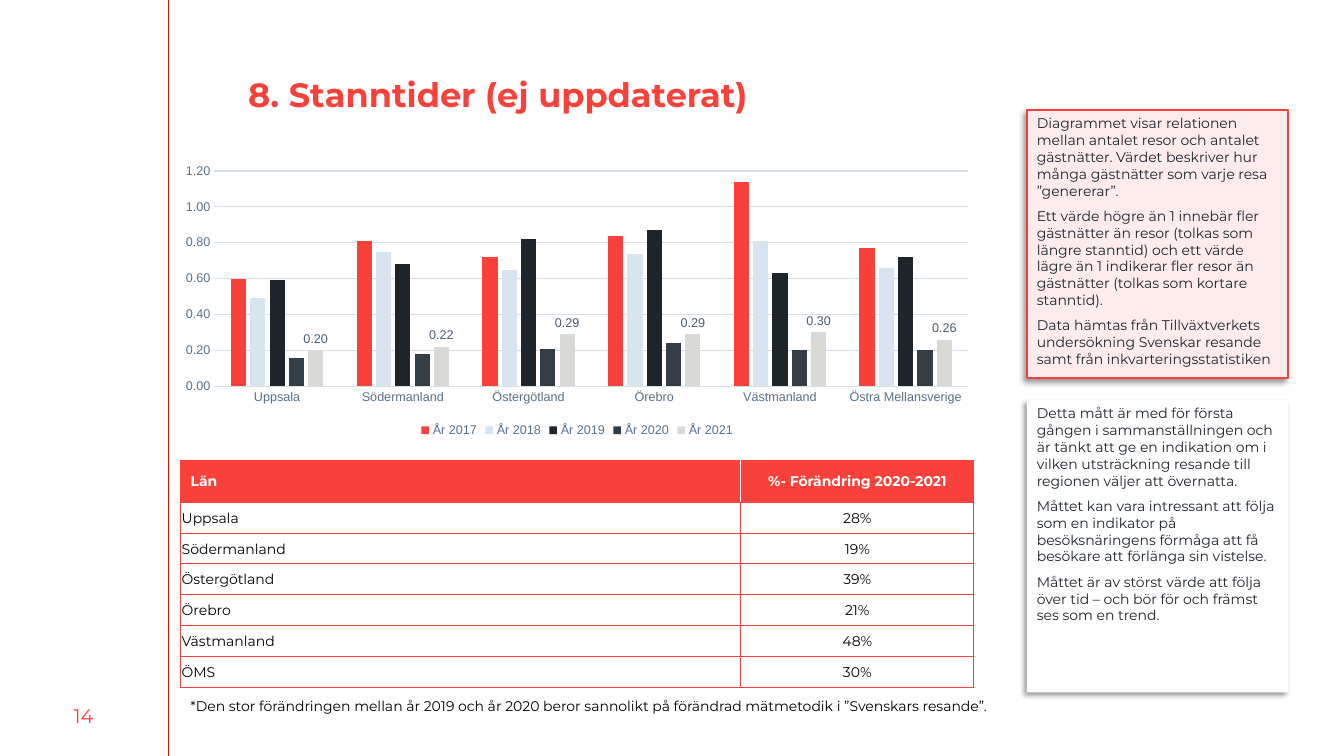
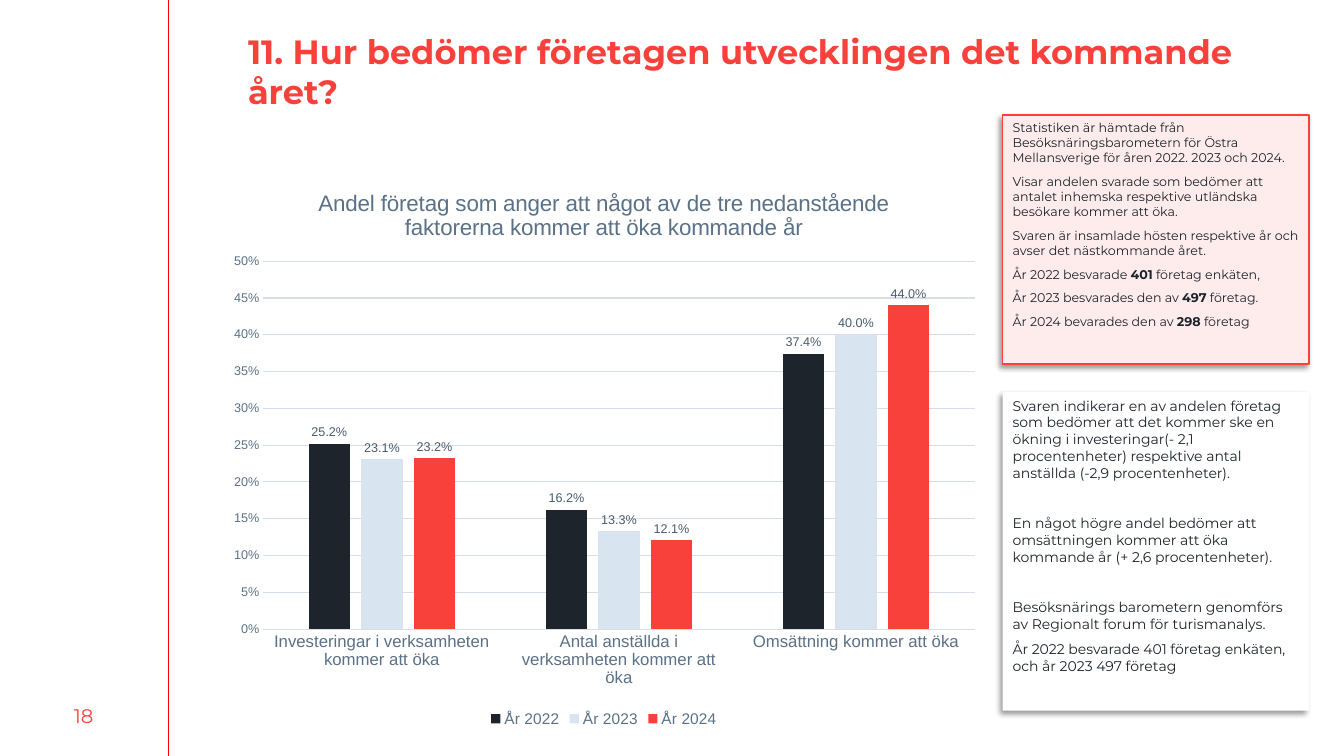
"""Build two slides on tourism statistics, each with a chart and two side notes."""
from lxml import etree
from pptx import Presentation
from pptx.chart.data import CategoryChartData
from pptx.dml.color import RGBColor
from pptx.enum.chart import XL_CHART_TYPE, XL_LABEL_POSITION, XL_LEGEND_POSITION, XL_TICK_MARK
from pptx.enum.shapes import MSO_CONNECTOR, MSO_SHAPE
from pptx.enum.text import MSO_ANCHOR, MSO_AUTO_SIZE, PP_ALIGN
from pptx.oxml import parse_xml
from pptx.oxml.ns import nsdecls, qn
from pptx.util import Cm, Pt

COLUMNS = XL_CHART_TYPE.COLUMN_CLUSTERED
OUTSIDE = XL_LABEL_POSITION.OUTSIDE_END
BOTTOM = XL_LEGEND_POSITION.BOTTOM
NO_TICK = XL_TICK_MARK.NONE
STRAIGHT, RECTANGLE = MSO_CONNECTOR.STRAIGHT, MSO_SHAPE.RECTANGLE
TOP, MIDDLE = MSO_ANCHOR.TOP, MSO_ANCHOR.MIDDLE
LEFT, CENTER = PP_ALIGN.LEFT, PP_ALIGN.CENTER

WIDTH, HEIGHT, RULE_X = 33.87, 19.05, 4.24
FONT, CHART_FONT = "Montserrat", "Arial"
COLORS = {
    "red": "F8413A", "rule": "FF0000", "pink": "FEECEC", "white": "FFFFFF",
    "black": "000000", "ink": "1D242B", "slate": "333D46", "ice": "D8E5F0",
    "gray": "D9D9D6", "axis": "5B7187", "grid": "D8DEE5", "label": "495B6C",
}

SLIDES = [
    {
        "number": "14",
        "title": "8. Stanntider (ej uppdaterat)",
        "title_top": 1.73,
        "notes": {"left": 25.88, "width": 6.58, "items": [
            {"top": 2.77, "height": 6.76, "size": 10, "text": [
                "Diagrammet visar relationen mellan antalet resor och antalet gästnätter. "
                "Värdet beskriver hur många gästnätter som varje resa ”genererar”.",
                "Ett värde högre än 1 innebär fler gästnätter än resor (tolkas som längre "
                "stanntid) och ett värde lägre än 1 indikerar fler resor än gästnätter "
                "(tolkas som kortare stanntid).",
                "Data hämtas från Tillväxtverkets undersökning Svenskar resande samt från "
                "inkvarteringsstatistiken"]},
            {"top": 10.08, "height": 7.37, "size": 10, "text": [
                "Detta mått är med för första gången i sammanställningen och är tänkt att ge "
                "en indikation om i vilken utsträckning resande till regionen väljer att "
                "övernatta.",
                "Måttet kan vara intressant att följa som en indikator på besöksnäringens "
                "förmåga att få besökare att förlänga sin vistelse.",
                "Måttet är av störst värde att följa över tid – och bör för och främst ses "
                "som en trend."]}]},
        "chart": {
            "at": (4.27, 3.99, 20.55, 7.14), "plot": (0.055, 0.045, 0.925, 0.76),
            "title": None, "sizes": {"category": 9, "legend": 9},
            "scale": (1.2, 0.2), "axis_format": "0.00", "label_format": "0.00",
            "categories": ["Uppsala", "Södermanland", "Östergötland", "Örebro",
                           "Västmanland", "Östra Mellansverige"],
            "series": [
                ("År 2017", "red", False, [0.6, 0.81, 0.72, 0.84, 1.14, 0.77]),
                ("År 2018", "ice", False, [0.49, 0.75, 0.65, 0.74, 0.81, 0.66]),
                ("År 2019", "ink", False, [0.59, 0.68, 0.82, 0.87, 0.63, 0.72]),
                ("År 2020", "slate", False, [0.16, 0.18, 0.21, 0.24, 0.2, 0.2]),
                ("År 2021", "gray", True, [0.2, 0.22, 0.29, 0.29, 0.3, 0.26])]},
        "table": [("Län", "%- Förändring 2020-2021"), ("Uppsala", "28%"),
                  ("Södermanland", "19%"), ("Östergötland", "39%"), ("Örebro", "21%"),
                  ("Västmanland", "48%"), ("ÖMS", "30%")],
        "footnote": "*Den stor förändringen mellan år 2019 och år 2020 beror sannolikt på "
                    "förändrad mätmetodik i ”Svenskars resande”.",
    },
    {
        "number": "18",
        "title": "11. Hur bedömer företagen utvecklingen det kommande året?",
        "title_top": 0.64,
        "notes": {"left": 25.27, "width": 7.72, "items": [
            {"top": 2.9, "height": 6.27, "size": 9, "text": [
                "Statistiken är hämtade från Besöksnäringsbarometern för Östra Mellansverige "
                "för åren 2022. 2023 och 2024.",
                "Visar andelen svarade som bedömer att antalet inhemska respektive utländska "
                "besökare kommer att öka.",
                "Svaren är insamlade hösten respektive år och avser det nästkommande året.",
                "År 2022 besvarade |401| företag enkäten,",
                "År 2023 besvarades den av |497| företag.",
                "År 2024 bevarades den av |298| företag"]},
            {"top": 9.88, "height": 8.03, "size": 10, "gaps": {1: 21, 2: 21}, "text": [
                "Svaren indikerar en av andelen företag som bedömer att det kommer ske en "
                "ökning i investeringar(- 2,1 procentenheter) respektive antal anställda "
                "(-2,9 procentenheter).",
                "En något högre andel bedömer att omsättningen kommer att öka kommande år "
                "(+ 2,6 procentenheter).",
                "Besöksnärings barometern genomförs av Regionalt forum för turismanalys.",
                "År 2022 besvarade 401 företag enkäten, och år 2023 497 företag"]}]},
        "chart": {
            "at": (5.49, 4.24, 19.46, 14.2), "plot": (0.059, 0.165, 0.921, 0.653),
            "title": "Andel företag som anger att något av de tre nedanstående faktorerna "
                     "kommer att öka kommande år",
            "sizes": {"category": 12, "legend": 11},
            "scale": (0.5, 0.05), "axis_format": "0%", "label_format": "0.0%",
            "categories": ["Investeringar i verksamheten kommer att öka",
                           "Antal anställda i verksamheten kommer att öka",
                           "Omsättning kommer att öka"],
            "series": [
                ("År 2022", "ink", True, [0.252, 0.162, 0.374]),
                ("År 2023", "ice", True, [0.231, 0.133, 0.4]),
                ("År 2024", "red", True, [0.232, 0.121, 0.44])]},
    },
]


def rgb(name):
    """Return the named colour."""
    return RGBColor.from_string(COLORS[name])


def style(font, size, color, bold=False, name=FONT):
    """Format a font."""
    font.name, font.size, font.bold = name, Pt(size), bold
    font.color.rgb = rgb(color)


def write(frame, *texts, size=10, color="ink", bold=False, align=LEFT, anchor=TOP,
          before=0, after=0, spacing=1.0, gaps=None):
    """Fill a text frame; pieces between bars are bold."""
    frame.word_wrap = True
    frame.vertical_anchor = anchor
    for index, text in enumerate(texts):
        para = frame.add_paragraph() if index else frame.paragraphs[0]
        para.alignment, para.line_spacing = align, spacing
        para.space_before = Pt((gaps or {}).get(index, before) if index else 0)
        para.space_after = Pt(after)
        for position, piece in enumerate(text.split("|")):
            span = para.add_run()
            span.text = piece
            style(span.font, size, color, bold or position % 2 == 1)


def add_rule(page, layout):
    """Draw the vertical rule and move it to the shared layout."""
    rule = page.shapes.add_connector(STRAIGHT, Cm(RULE_X), 0, Cm(RULE_X), Cm(HEIGHT))
    rule.line.color.rgb = rgb("rule")
    rule.line.width = Pt(0.75)
    etree.SubElement(rule.element.spPr, qn("a:effectLst"))
    layout.shapes.element.append(rule.element)


def add_text(page, text, left, top, width, height, **options):
    """Add a text box."""
    box = page.shapes.add_textbox(Cm(left), Cm(top), Cm(width), Cm(height))
    write(box.text_frame, text, **options)


def add_title(page, text, top):
    """Place and format the title placeholder."""
    title = page.shapes.title
    title.left, title.top, title.width, title.height = Cm(6.12), Cm(top), Cm(25.7), Cm(2.26)
    frame = title.text_frame
    frame.auto_size = MSO_AUTO_SIZE.NONE
    frame.margin_left = frame.margin_right = frame.margin_top = frame.margin_bottom = Cm(0.13)
    write(frame, text, size=24, color="red", bold=True)


def add_note(page, note, left, width, framed):
    """Add a shadowed side note, pink with a red frame or plain white."""
    box = page.shapes.add_shape(RECTANGLE, Cm(left), Cm(note["top"]), Cm(width),
                                Cm(note["height"]))
    box.fill.solid()
    box.fill.fore_color.rgb = rgb("pink" if framed else "white")
    if framed:
        box.line.color.rgb = rgb("red")
        box.line.width = Pt(1)
    else:
        box.line.fill.background()
    box.shadow.inherit = False
    effects = box.element.spPr.find(qn("a:effectLst"))
    effects.append(parse_xml(
        f'<a:outerShdw {nsdecls("a")} blurRad="{Pt(4)}" dist="{Pt(3)}" dir="8100000" '
        f'algn="tr" rotWithShape="0"><a:srgbClr val="{COLORS["black"]}">'
        '<a:alpha val="40000"/></a:srgbClr></a:outerShdw>'))
    write(box.text_frame, *note["text"], size=note["size"], before=3, after=3,
          gaps=note.get("gaps"))


def place_plot(chart, fractions):
    """Fix the inner plot area as fractions of the chart."""
    area = chart.element.find(".//" + qn("c:plotArea"))
    for old in area.findall(qn("c:layout")):
        area.remove(old)
    modes = '<c:layoutTarget val="inner"/><c:xMode val="edge"/><c:yMode val="edge"/>'
    values = "".join(f'<c:{key} val="{value}"/>' for key, value in zip("xywh", fractions))
    area.insert(0, parse_xml(f'<c:layout {nsdecls("c")}><c:manualLayout>{modes}{values}'
                             '</c:manualLayout></c:layout>'))


def add_columns(page, plan):
    """Add a clustered column chart."""
    data = CategoryChartData(number_format=plan["label_format"])
    data.categories = plan["categories"]
    for name, _, _, values in plan["series"]:
        data.add_series(name, values)
    chart = page.shapes.add_chart(COLUMNS, *map(Cm, plan["at"]), data).chart
    style(chart.font, 10, "ink", name=CHART_FONT)
    chart.has_title = bool(plan["title"])
    if plan["title"]:
        frame = chart.chart_title.text_frame
        frame.text = plan["title"]
        style(frame.paragraphs[0].runs[0].font, 16, "axis", name=CHART_FONT)
        chart.chart_title.include_in_layout = False
    chart.has_legend = True
    chart.legend.position = BOTTOM
    chart.legend.include_in_layout = False
    style(chart.legend.font, plan["sizes"]["legend"], "axis", name=CHART_FONT)

    values, categories = chart.value_axis, chart.category_axis
    for axis, size in ((values, 9), (categories, plan["sizes"]["category"])):
        axis.major_tick_mark = axis.minor_tick_mark = NO_TICK
        style(axis.tick_labels.font, size, "axis", name=CHART_FONT)
    values.minimum_scale = 0
    values.maximum_scale, values.major_unit = plan["scale"]
    values.tick_labels.number_format = plan["axis_format"]
    values.tick_labels.number_format_is_linked = False
    values.format.line.fill.background()
    for line in (categories.format.line, values.major_gridlines.format.line):
        line.color.rgb = rgb("grid")
        line.width = Pt(0.75)

    plot = chart.plots[0]
    plot.gap_width, plot.overlap, plot.vary_by_categories = 219, -27, False
    for series, (_, color, labelled, _) in zip(plot.series, plan["series"]):
        series.format.fill.solid()
        series.format.fill.fore_color.rgb = rgb(color)
        if labelled:
            labels = series.data_labels
            labels.show_value = True
            labels.position = OUTSIDE
            labels.number_format = plan["label_format"]
            labels.number_format_is_linked = False
            style(labels.font, 9, "label", name=CHART_FONT)
    place_plot(chart, plan["plot"])


def border(cell, **sides):
    """Set the cell's side lines, given in the order L, R, T, B."""
    properties = cell._tc.get_or_add_tcPr()
    for index, (side, color) in enumerate(sides.items()):
        properties.insert(index, parse_xml(
            f'<a:ln{side} {nsdecls("a")} w="{Pt(0.75)}"><a:solidFill>'
            f'<a:srgbClr val="{COLORS[color]}"/></a:solidFill></a:ln{side}>'))


def add_grid(page, rows):
    """Add the table with a red header row."""
    widths, heights = (14.12, 5.87), [1.04] + [0.78] * (len(rows) - 1)
    table = page.shapes.add_table(len(rows), len(widths), Cm(4.55), Cm(11.61),
                                  Cm(sum(widths)), Cm(sum(heights))).table
    table.horz_banding = False
    for column, width in zip(table.columns, widths):
        column.width = Cm(width)
    for r, (row, height) in enumerate(zip(rows, heights)):
        table.rows[r].height = Cm(height)
        for c, text in enumerate(row):
            cell = table.cell(r, c)
            header = r == 0
            if header:
                cell.fill.solid()
                cell.fill.fore_color.rgb = rgb("red")
            else:
                cell.fill.background()
                cell.margin_left = cell.margin_right = cell.margin_top = Cm(0.03)
                cell.margin_bottom = 0
            write(cell.text_frame, text, color="white" if header else "black", bold=header,
                  align=CENTER if c else LEFT)
            cell.vertical_anchor = MIDDLE
            inner = "white" if header else "red"
            border(cell, L=inner if c else "red", R="red" if c else inner, T="red", B="red")


def main():
    """Build and save the deck."""
    deck = Presentation()
    deck.slide_width, deck.slide_height = Cm(WIDTH), Cm(HEIGHT)
    layout = deck.slide_layouts[5]
    for index, plan in enumerate(SLIDES):
        page = deck.slides.add_slide(layout)
        if index == 0:
            add_rule(page, layout)
        add_title(page, plan["title"], plan["title_top"])
        add_text(page, plan["number"], 0, 17.53, 4.22, 1.02, size=14, color="red",
                 align=CENTER, anchor=MIDDLE)
        notes = plan["notes"]
        for position, note in enumerate(notes["items"]):
            add_note(page, note, notes["left"], notes["width"], framed=position == 0)
        add_columns(page, plan["chart"])
        if "table" in plan:
            add_grid(page, plan["table"])
            add_text(page, plan["footnote"], 4.55, 17.37, 21.1, 1, color="black", spacing=1.2)
    deck.save("out.pptx")


if __name__ == "__main__":
    main()
